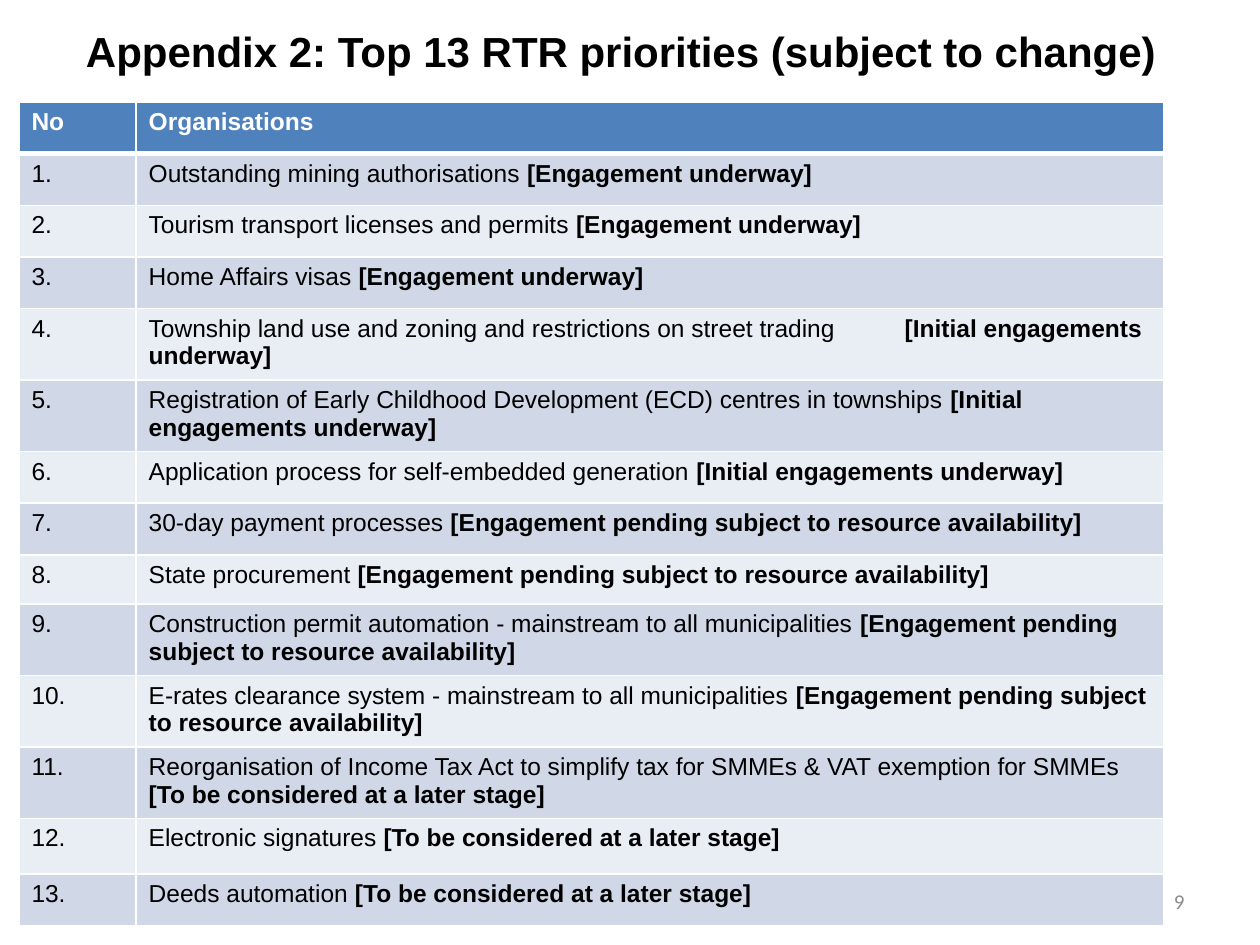
import pptx
import pptx.util
import pptx.dml.color
import pptx.enum.text
import pptx.oxml
import pptx.oxml.ns
from lxml import etree

Inches, Pt = pptx.util.Inches, pptx.util.Pt
ALIGN = pptx.enum.text.PP_ALIGN
ANCHOR = pptx.enum.text.MSO_ANCHOR

TITLE = "Appendix 2: Top 13 RTR priorities (subject to change)"
PAGE = "9"
HEADERS = ("No", "Organisations")
UNDERWAY = "[Engagement underway]"
INITIAL = "[Initial engagements underway]"
PENDING = "[Engagement pending subject to resource availability]"
LATER = "[To be considered at a later stage]"
PRIORITIES = [
    ("Outstanding mining authorisations ", UNDERWAY),
    ("Tourism transport licenses and permits ", UNDERWAY),
    ("Home Affairs visas ", UNDERWAY),
    ("Township land use and zoning and restrictions on street trading \t", INITIAL),
    ("Registration of Early Childhood Development (ECD) centres in townships ", INITIAL),
    ("Application process for self-embedded generation ", INITIAL),
    ("30-day payment processes ", PENDING),
    ("State procurement ", PENDING),
    ("Construction permit automation - mainstream to all municipalities ", PENDING),
    ("E-rates clearance system - mainstream to all municipalities ", PENDING),
    ("Reorganisation of Income Tax Act to simplify tax for SMMEs & VAT exemption for SMMEs ", LATER),
    ("Electronic signatures ", LATER),
    ("Deeds automation ", LATER),
]

THEME = {
    "title": {"name": "Arial", "size": Pt(24), "bold": True, "color": "000000"},
    "header": {"name": "Arial", "size": Pt(14), "bold": True, "color": "FFFFFF"},
    "body": {"name": "Arial", "size": Pt(14), "bold": False, "color": "000000"},
    "status": {"name": "Arial", "size": Pt(14), "bold": True, "color": "000000"},
    "page": {"name": "Calibri", "size": Pt(12), "bold": False, "color": "8C8C8C"},
    "header_fill": "4F81BD",
    "bands": ("D0D8E8", "E9EDF4"),
    "border": "FFFFFF",
}
COL_WIDTHS = (0.93, 8.16)
ROW_HEIGHT = 0.41
SPECIAL_HEIGHTS = {8: 0.39, 12: 0.44}


def rgb(value):
    return pptx.dml.color.RGBColor.from_string(value)


def add_run(p, text, style):
    r = p.add_run()
    r.text = text
    for key, value in THEME[style].items():
        if key == "color":
            r.font.color.rgb = rgb(value)
        else:
            setattr(r.font, key, value)


def add_text(slide, box, text, style, frame, align):
    tf = slide.shapes.add_textbox(*map(Inches, box)).text_frame
    for key, value in frame.items():
        setattr(tf, key, value)
    p = tf.paragraphs[0]
    p.alignment = align
    add_run(p, text, style)


def set_borders(cell, bottom):
    """Draw 1 pt borders, with the bottom one at its own width; call before filling."""
    tc_pr = cell._tc.get_or_add_tcPr()
    for tag, width in (("a:lnL", 1), ("a:lnR", 1), ("a:lnT", 1), ("a:lnB", bottom)):
        ln = etree.SubElement(tc_pr, pptx.oxml.ns.qn(tag), w=str(Pt(width)))
        fill = etree.SubElement(ln, pptx.oxml.ns.qn("a:solidFill"))
        etree.SubElement(fill, pptx.oxml.ns.qn("a:srgbClr"), val=THEME["border"])


def fill_cell(cell, runs, fill, bottom=1):
    set_borders(cell, bottom)
    cell.fill.solid()
    cell.fill.fore_color.rgb = rgb(fill)
    for text, style in runs:
        add_run(cell.text_frame.paragraphs[0], text, style)


def add_priorities(slide):
    heights = [SPECIAL_HEIGHTS.get(i, ROW_HEIGHT) for i in range(len(PRIORITIES) + 1)]
    size = (sum(COL_WIDTHS), sum(heights))
    table = slide.shapes.add_table(len(heights), len(COL_WIDTHS),
                                   *map(Inches, (0.15, 0.81) + size)).table
    for col, width in zip(table.columns, COL_WIDTHS):
        col.width = Inches(width)
    for row, height in zip(table.rows, heights):
        row.height = Inches(height)

    for c, text in enumerate(HEADERS):
        fill_cell(table.cell(0, c), [(text, "header")], THEME["header_fill"], bottom=3)
    for n, (topic, status) in enumerate(PRIORITIES, 1):
        band = THEME["bands"][(n - 1) % 2]
        fill_cell(table.cell(n, 0), [(f"{n}.", "body")], band)
        fill_cell(table.cell(n, 1), [(topic, "body"), (status, "status")], band)


def main():
    prs = pptx.Presentation()
    prs.slide_width, prs.slide_height = Inches(10), Inches(7.5)
    slide = prs.slides.add_slide(prs.slide_layouts[6])
    add_text(slide, (0.15, 0.15, 9.56, 0.53), TITLE, "title",
             {"word_wrap": True, "margin_left": 0, "margin_right": 0}, ALIGN.CENTER)
    add_text(slide, (7.17, 6.95, 2.33, 0.4), PAGE, "page",
             {"word_wrap": True, "vertical_anchor": ANCHOR.MIDDLE}, ALIGN.RIGHT)
    add_priorities(slide)
    prs.save("out.pptx")


if __name__ == "__main__":
    main()
